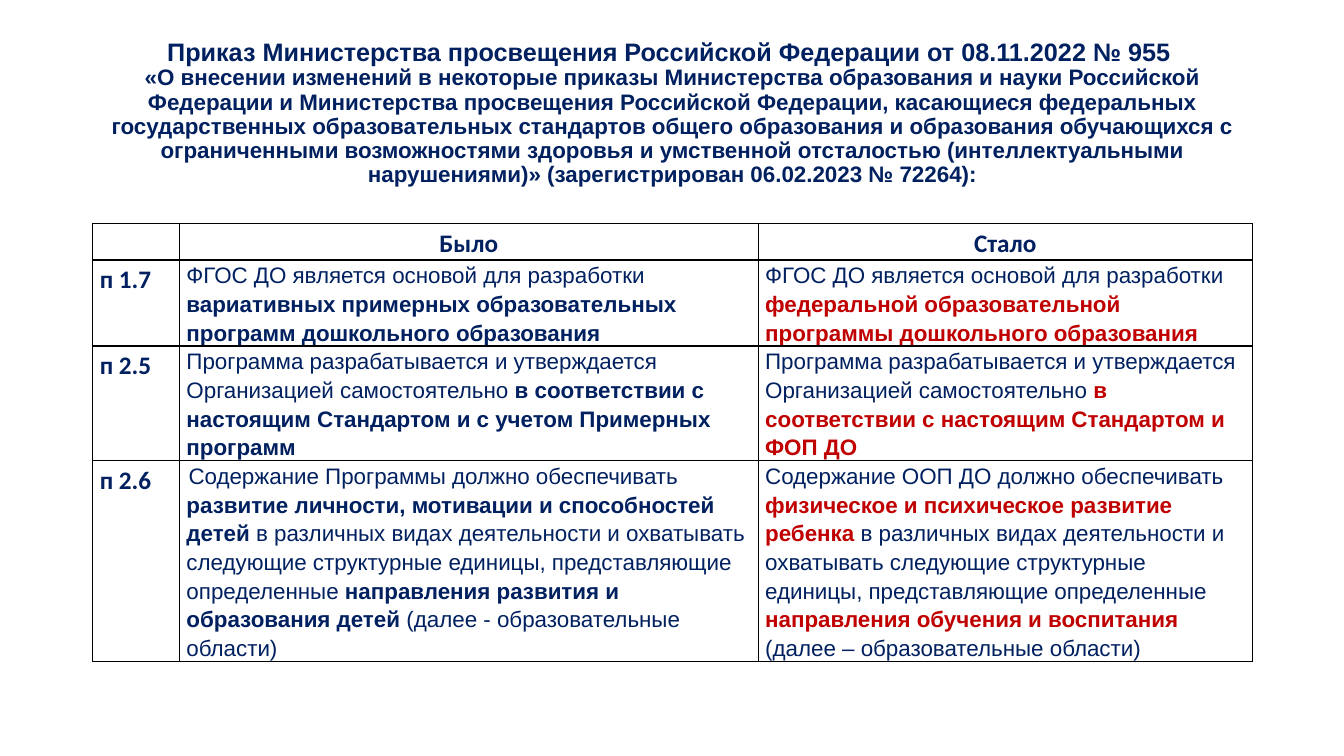
import pptx
import pptx.util
import pptx.dml.color
import pptx.enum.text
import pptx.oxml
import pptx.oxml.ns

Inches, Pt = pptx.util.Inches, pptx.util.Pt
RGB = pptx.dml.color.RGBColor
ALIGN = pptx.enum.text.PP_ALIGN

NAVY = RGB(0x00, 0x20, 0x60)
RED = RGB(0xC0, 0x00, 0x00)

# Content
HEAD = "Приказ Министерства просвещения Российской Федерации от 08.11.2022 № 955"
ORDER = (
    "«О внесении изменений в некоторые приказы Министерства образования и науки "
    "Российской Федерации и Министерства просвещения Российской Федерации, "
    "касающиеся федеральных государственных образовательных стандартов общего "
    "образования и образования обучающихся с ограниченными возможностями здоровья "
    "и умственной отсталостью (интеллектуальными нарушениями)» "
    "(зарегистрирован 06.02.2023 № 72264):"
)
LABELS = ["", "Было", "Стало"]

# Each clause: label, old text, new text; plain and bold pieces alternate
CLAUSES = [
    ("п 1.7",
     ["ФГОС ДО является основой для разработки ",
      "вариативных примерных образовательных программ дошкольного образования"],
     ["ФГОС ДО является основой для разработки ",
      "федеральной образовательной программы дошкольного образования"]),
    ("п 2.5",
     ["Программа разрабатывается и утверждается Организацией самостоятельно",
      " в соответствии с настоящим Стандартом и с учетом Примерных программ"],
     ["Программа разрабатывается и утверждается Организацией самостоятельно ",
      "в соответствии с настоящим Стандартом и ФОП ДО"]),
    ("п 2.6",
     ["Содержание Программы должно обеспечивать ",
      "развитие личности, мотивации и способностей детей",
      " в различных видах деятельности и охватывать следующие структурные единицы, "
      "представляющие определенные ",
      "направления развития и образования детей",
      " (далее - образовательные области)"],
     ["Содержание ООП ДО должно обеспечивать ",
      "физическое и психическое развитие ребенка",
      " в различных видах деятельности и охватывать следующие структурные единицы, "
      "представляющие определенные ",
      "направления обучения и воспитания ",
      "(далее – образовательные области)"]),
]

# Layout in inches
LEFT, WIDTH = 0.92, 11.5
COLS = [0.86, 5.74, 4.9]
ROWS = [0.36, 0.85, 1.14, 1.98]


def add_run(para, text, size, face="Arial", bold=True, color=NAVY):
    run = para.add_run()
    run.text = text
    font = run.font
    font.size, font.name, font.bold = Pt(size), face, bold
    font.color.rgb = color


def style_cell(cell, align):
    cell.margin_left = cell.margin_right = Inches(0.07)
    cell.margin_top = cell.margin_bottom = 0
    props = cell._tc.get_or_add_tcPr()
    for side in ("lnL", "lnR", "lnT", "lnB"):
        props.append(pptx.oxml.parse_xml(
            f'<a:{side} {pptx.oxml.ns.nsdecls("a")} w="12700">'
            f'<a:solidFill><a:srgbClr val="000000"/></a:solidFill></a:{side}>'))
    cell.fill.background()
    para = cell.text_frame.paragraphs[0]
    para.alignment = align
    para.line_spacing = 1.15
    para.space_after = Pt(10)
    return para


def main():
    deck = pptx.Presentation()
    deck.slide_width, deck.slide_height = Inches(13.33), Inches(7.5)
    slide = deck.slides.add_slide(deck.slide_layouts[5])

    # Title
    title = slide.shapes.title
    title.left, title.top = Inches(LEFT), Inches(0.4)
    title.width, title.height = Inches(WIDTH), Inches(1.45)
    frame = title.text_frame
    frame.auto_size = pptx.enum.text.MSO_AUTO_SIZE.NONE
    frame.vertical_anchor = pptx.enum.text.MSO_ANCHOR.MIDDLE
    para = frame.paragraphs[0]
    para.alignment = ALIGN.CENTER
    para.line_spacing = 0.9
    add_run(para, HEAD + " ", 18)
    para.add_line_break()
    add_run(para, ORDER, 16)

    # Table frame
    table = slide.shapes.add_table(
        len(ROWS), len(COLS), Inches(LEFT), Inches(2.22),
        Inches(WIDTH), Inches(sum(ROWS))).table
    table.first_row = table.horz_banding = False
    for col, width in zip(table.columns, COLS):
        col.width = Inches(width)
    for row, height in zip(table.rows, ROWS):
        row.height = Inches(height)

    # Header row
    for c, label in enumerate(LABELS):
        para = style_cell(table.cell(0, c), ALIGN.CENTER)
        if label:
            add_run(para, label, 18, "Calibri")

    # Clause rows: changed wording is bold, and red in the new version
    for r, (label, *texts) in enumerate(CLAUSES, 1):
        para = style_cell(table.cell(r, 0), ALIGN.JUSTIFY)
        add_run(para, label, 18, "Calibri")
        for c, pieces in enumerate(texts, 1):
            para = style_cell(table.cell(r, c), ALIGN.LEFT)
            for i, piece in enumerate(pieces):
                bold = i % 2 == 1
                color = RED if bold and c == 2 else NAVY
                add_run(para, piece, 16, bold=bold, color=color)

    # Slight first-line indent in the last old text
    para = table.cell(3, 1).text_frame.paragraphs[0]
    para._p.get_or_add_pPr().set("indent", str(Inches(0.02)))

    deck.save("out.pptx")


if __name__ == "__main__":
    main()
